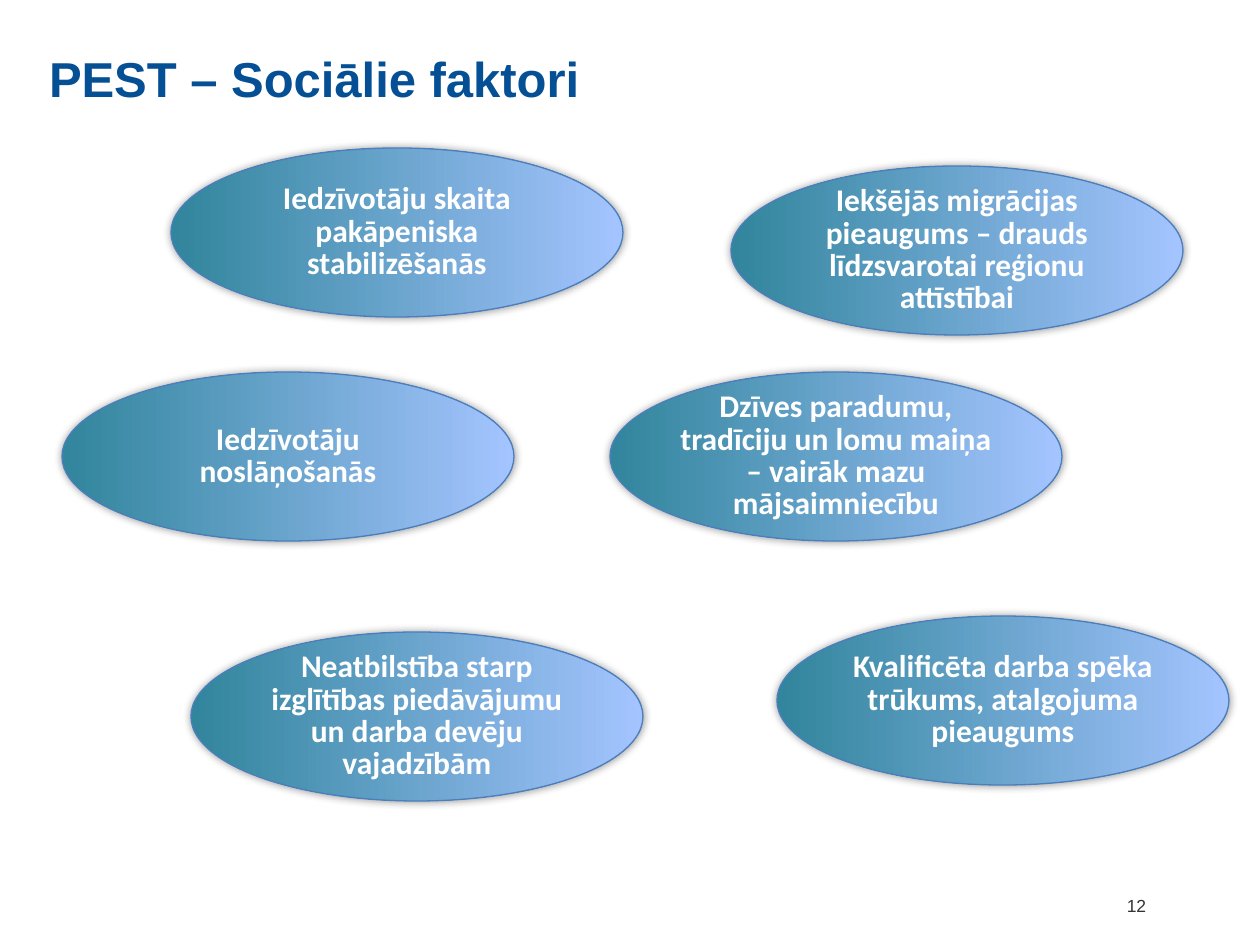
from dataclasses import dataclass

from lxml import etree
from pptx import Presentation, util as u
from pptx.dml.color import RGBColor
from pptx.enum import shapes, text
from pptx.oxml import ns

SCALE = 914400 / 126


@dataclass(frozen=True)
class Theme:
    title: str = "054F95"
    number: str = "333333"
    label: str = "FFFFFF"
    start: str = "31859C"
    end: str = "A4C4FF"
    edge: str = "4B7EBC"
    glow: str = "000000"
    head: str = "Arial"
    body: str = "Calibri"
    big: int = 28
    mid: int = 18
    small: int = 10


def px(*vals):
    return [u.Emu(round(v * SCALE)) for v in vals]


def write(frame, words, font, size, color, bold=False, align="LEFT",
          anchor="MIDDLE", space=1.0, inset=(0, 0)):
    frame.word_wrap = True
    frame.auto_size = text.MSO_AUTO_SIZE.NONE
    frame.vertical_anchor = text.MSO_ANCHOR[anchor]
    frame.margin_left = frame.margin_right = px(inset[0])[0]
    frame.margin_top = frame.margin_bottom = px(inset[1])[0]
    para = frame.paragraphs[0]
    para.alignment = text.PP_ALIGN[align]
    para.line_spacing = space
    run = para.add_run()
    run.text = words
    run.font.name = font
    run.font.size = u.Pt(size)
    run.font.bold = bold
    run.font.color.rgb = RGBColor.from_string(color)


class Deck:
    def __init__(self, theme):
        self.theme = theme
        self.prs = Presentation()
        self.prs.slide_width, self.prs.slide_height = px(1260, 945)
        self.slide = self.prs.slides.add_slide(self.prs.slide_layouts[5])

    def title(self, words, *box):
        t = self.theme
        shape = self.slide.shapes.title
        shape.left, shape.top, shape.width, shape.height = px(*box)
        write(shape.text_frame, words, t.head, t.big, t.title,
              bold=True, anchor="TOP")

    def number(self, words, *box):
        t = self.theme
        shape = self.slide.shapes.add_textbox(*px(*box))
        write(shape.text_frame, words, t.head, t.small, t.number,
              align="CENTER")

    def oval(self, words, *box):
        t = self.theme
        shape = self.slide.shapes.add_shape(
            shapes.MSO_SHAPE.OVAL, *px(*box))
        shape.fill.gradient()
        shape.fill.gradient_angle = 0
        for stop, color in zip(shape.fill.gradient_stops, (t.start, t.end)):
            stop.color.rgb = RGBColor.from_string(color)
        shape.line.color.rgb = RGBColor.from_string(t.edge)
        shape.line.width = u.Pt(0.75)
        self.shade(shape)
        write(shape.text_frame, words, t.body, t.mid, t.label, bold=True,
              align="CENTER", space=0.85, inset=(3, 6))

    def shade(self, shape):
        shape.shadow.inherit = False
        effects = shape._element.spPr.find(ns.qn("a:effectLst"))
        outer = etree.SubElement(
            effects, ns.qn("a:outerShdw"), blurRad=str(u.Pt(5)),
            dist="0", dir="0", algn="ctr", rotWithShape="0")
        color = etree.SubElement(
            outer, ns.qn("a:srgbClr"), val=self.theme.glow)
        etree.SubElement(color, ns.qn("a:alpha"), val="40000")

    def save(self):
        self.prs.save("out.pptx")


FACTORS = [
    (171, 148, "Iedzīvotāju skaita pakāpeniska stabilizēšanās"),
    (731, 166, "Iekšējās migrācijas pieaugums – drauds līdzsvarotai "
               "reģionu attīstībai"),
    (610, 372, "Dzīves paradumu, tradīciju un lomu maiņa – vairāk mazu "
               "mājsaimniecību"),
    (777, 616, "Kvalificēta darba spēka trūkums, atalgojuma pieaugums"),
    (191, 632, "Neatbilstība starp izglītības piedāvājumu un darba devēju "
               "vajadzībām"),
    (62, 372, "Iedzīvotāju noslāņošanās"),
]


def main():
    deck = Deck(Theme())
    deck.title("PEST – Sociālie faktori", 49, 48, 1162, 149)
    deck.number("12", 1062, 893, 149, 25)
    for left, top, words in FACTORS:
        deck.oval(words, left, top, 452, 169)
    deck.save()


if __name__ == "__main__":
    main()
